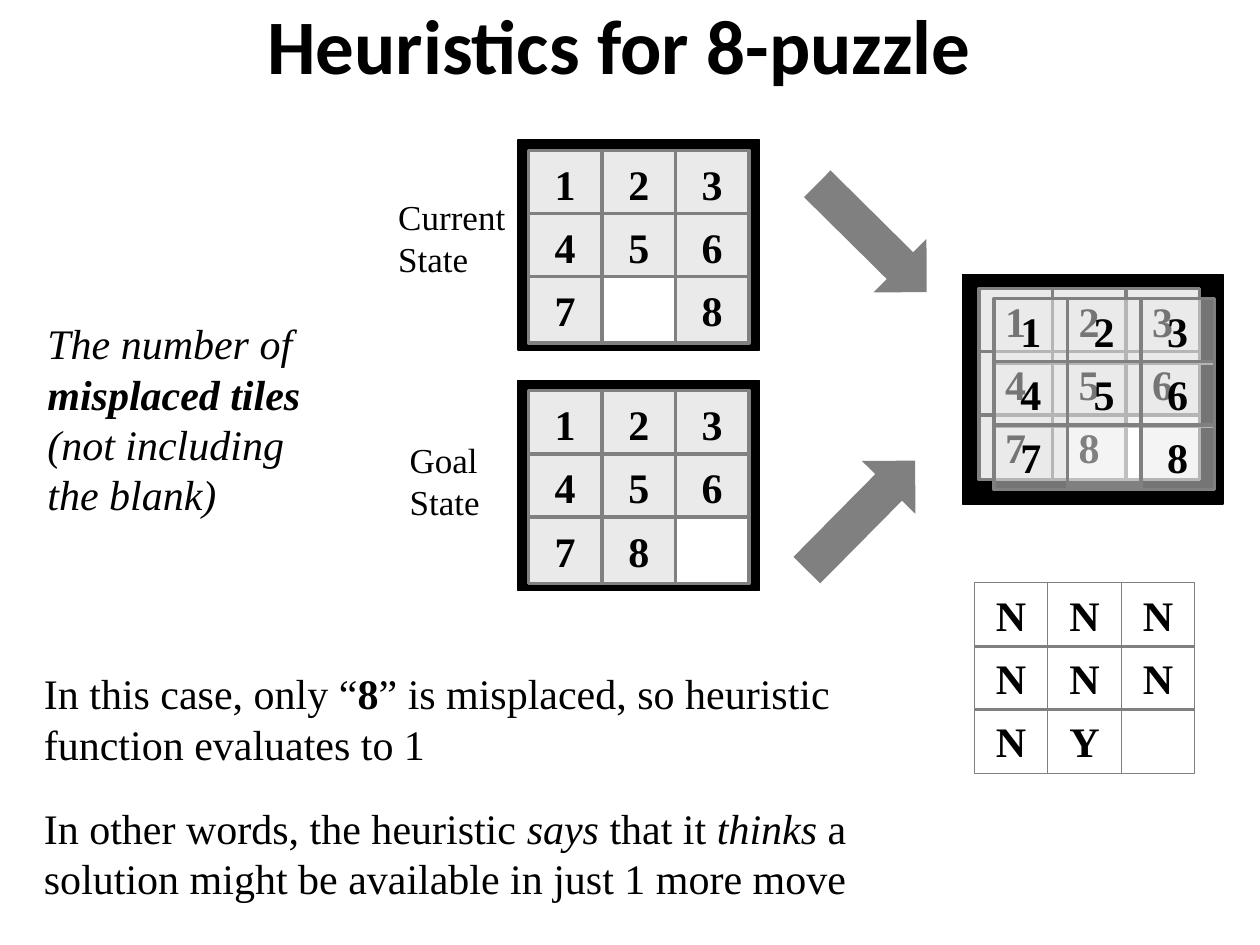
from lxml import etree
from pptx import Presentation
from pptx.dml.color import RGBColor
from pptx.enum.shapes import MSO_SHAPE
from pptx.enum.text import MSO_ANCHOR, PP_ALIGN
from pptx.oxml.ns import qn
from pptx.util import Pt

RECTANGLE = MSO_SHAPE.RECTANGLE
RIGHT_ARROW = MSO_SHAPE.RIGHT_ARROW
CENTER, LEFT = PP_ALIGN.CENTER, PP_ALIGN.LEFT
MIDDLE, TOP = MSO_ANCHOR.MIDDLE, MSO_ANCHOR.TOP

BLACK = RGBColor(0x00, 0x00, 0x00)
WHITE = RGBColor(0xFF, 0xFF, 0xFF)
GRAY = RGBColor(0x80, 0x80, 0x80)
TILE_GRAY = RGBColor(0xEA, 0xEA, 0xEA)

BOLD = {"bold": True}
ITALIC = {"italic": True}
BOLD_ITALIC = {"bold": True, "italic": True}

TILE_WIDTH = 42
TILE_PITCH = 36.1
CURRENT_STATE = "1234567 8"
GOAL_STATE = "12345678 "
MISPLACED = "NNNNNNNY "


class PuzzleSlide:
    """Holds the text style and the slide being built."""

    font_name = "Times New Roman"
    line_factor = 1.2

    def __init__(self, slide):
        self.slide = slide

    def add_run(self, paragraph, text, **values):
        run = paragraph.add_run()
        run.text = text
        run.font.color.rgb = BLACK
        for name, value in ({"name": self.font_name} | values).items():
            setattr(run.font, name, value)

    def fill_text(self, frame, paragraphs, size, alignment=LEFT, gap=0):
        """Each paragraph is a list of (text, format values) runs."""
        frame.word_wrap = True
        for index, runs in enumerate(paragraphs):
            paragraph = frame.add_paragraph() if index else frame.paragraphs[0]
            values = {
                "alignment": alignment,
                "line_spacing": Pt(size * self.line_factor),
                "space_before": Pt(gap if index else 0),
            }
            for name, value in values.items():
                setattr(paragraph, name, value)
            for text, font_values in runs:
                self.add_run(paragraph, text, size=Pt(size), **font_values)

    def title(self, text, left, top, width, height):
        title = self.slide.shapes.title
        box = {"left": left, "top": top, "width": width, "height": height}
        for name, value in box.items():
            setattr(title, name, Pt(value))
        title.text_frame.vertical_anchor = MIDDLE
        paragraph = title.text_frame.paragraphs[0]
        paragraph.alignment = CENTER
        self.add_run(paragraph, text, name="Calibri", size=Pt(44), bold=True)

    def text(self, paragraphs, left, top, width, height, size=24, gap=0):
        box = self.slide.shapes.add_textbox(Pt(left), Pt(top), Pt(width), Pt(height))
        box.text_frame.vertical_anchor = TOP
        self.fill_text(box.text_frame, paragraphs, size, gap=gap)

    def group(self):
        return self.slide.shapes.add_group_shape()

    def box(self, left, top, width, height, fill, line, line_width, parent=None, alpha=None):
        shapes = (parent or self.slide).shapes
        shape = shapes.add_shape(RECTANGLE, Pt(left), Pt(top), Pt(width), Pt(height))
        shape.shadow.inherit = False
        if fill is None:
            shape.fill.background()
        else:
            shape.fill.solid()
            shape.fill.fore_color.rgb = fill
        if alpha is not None:
            color = next(shape.element.spPr.iter(qn("a:srgbClr")))
            etree.SubElement(color, qn("a:alpha"), val=str(alpha * 1000))
        shape.line.color.rgb = line
        shape.line.width = Pt(line_width)
        return shape

    def board(self, group, state, left, top, tile_height=36.9, fill=TILE_GRAY,
              blank_fill=WHITE, line_width=2, alpha=None):
        # The blank goes last so that its border lies over its neighbours
        for index in sorted(range(9), key=lambda position: state[position] == " "):
            row, column = divmod(index, 3)
            label = state[index].strip()
            tile = self.box(left + column * TILE_WIDTH, top + row * TILE_PITCH,
                            TILE_WIDTH, tile_height, fill if label else blank_fill,
                            GRAY, line_width, group, alpha)
            if label:
                tile.text_frame.vertical_anchor = MIDDLE
                self.fill_text(tile.text_frame, [[(label, BOLD)]], 24, CENTER)

    def framed_board(self, state, left, top):
        group = self.group()
        self.box(left, top, 138, 120, BLACK, BLACK, 0.75, group)
        self.board(group, state, left + 6, top + 5.9, tile_height=38)

    def arrow(self, left, top, rotation):
        arrow = self.slide.shapes.add_shape(RIGHT_ARROW, Pt(left), Pt(top), Pt(88), Pt(43))
        arrow.shadow.inherit = False
        arrow.fill.solid()
        arrow.fill.fore_color.rgb = GRAY
        arrow.line.fill.background()
        arrow.rotation = rotation


def main():
    presentation = Presentation()
    presentation.slide_width, presentation.slide_height = Pt(720), Pt(540)
    page = PuzzleSlide(presentation.slides.add_slide(presentation.slide_layouts[5]))

    # Backdrop of the overlaid boards
    page.box(550, 157, 149, 131, BLACK, BLACK, 0.75)

    # Title and definition of the heuristic
    page.title("Heuristics for 8-puzzle ", 53, -20, 612, 90)
    page.text([[("The number of ", ITALIC), ("misplaced tiles", BOLD_ITALIC),
                (" (not including the blank)", ITALIC)]], 20, 178, 168.5, 124)

    # Current and goal boards
    page.framed_board(CURRENT_STATE, 296, 80)
    page.framed_board(GOAL_STATE, 296, 217.3)

    # Explanation and board labels
    page.text([
        [("In this case, only “", {}), ("8", BOLD),
         ("” is misplaced, so heuristic function evaluates to 1", {})],
        [("In other words, the heuristic ", {}), ("says", ITALIC), (" that it ", {}),
         ("thinks", ITALIC), (" a solution might be available in just 1 more move", {})],
    ], 18, 378, 516, 143, gap=19.2)
    page.text([[("Goal State", {})]], 227, 247, 83.5, 55, size=20)
    page.text([[("Current State", {})]], 220.5, 108, 93.5, 55, size=20)

    # Current state laid over the goal state
    overlay = page.group()
    page.board(overlay, GOAL_STATE, 559.4, 164.9)
    page.board(overlay, CURRENT_STATE, 568, 170.6, alpha=50)

    # Arrows towards the overlay
    page.arrow(454.3, 114.5, 44.7)
    page.arrow(448, 273, 314.7)

    # Which tiles are misplaced
    page.board(page.group(), MISPLACED, 556.8, 332.8, fill=None, blank_fill=None,
               line_width=0.75)

    presentation.save("out.pptx")


if __name__ == "__main__":
    main()
